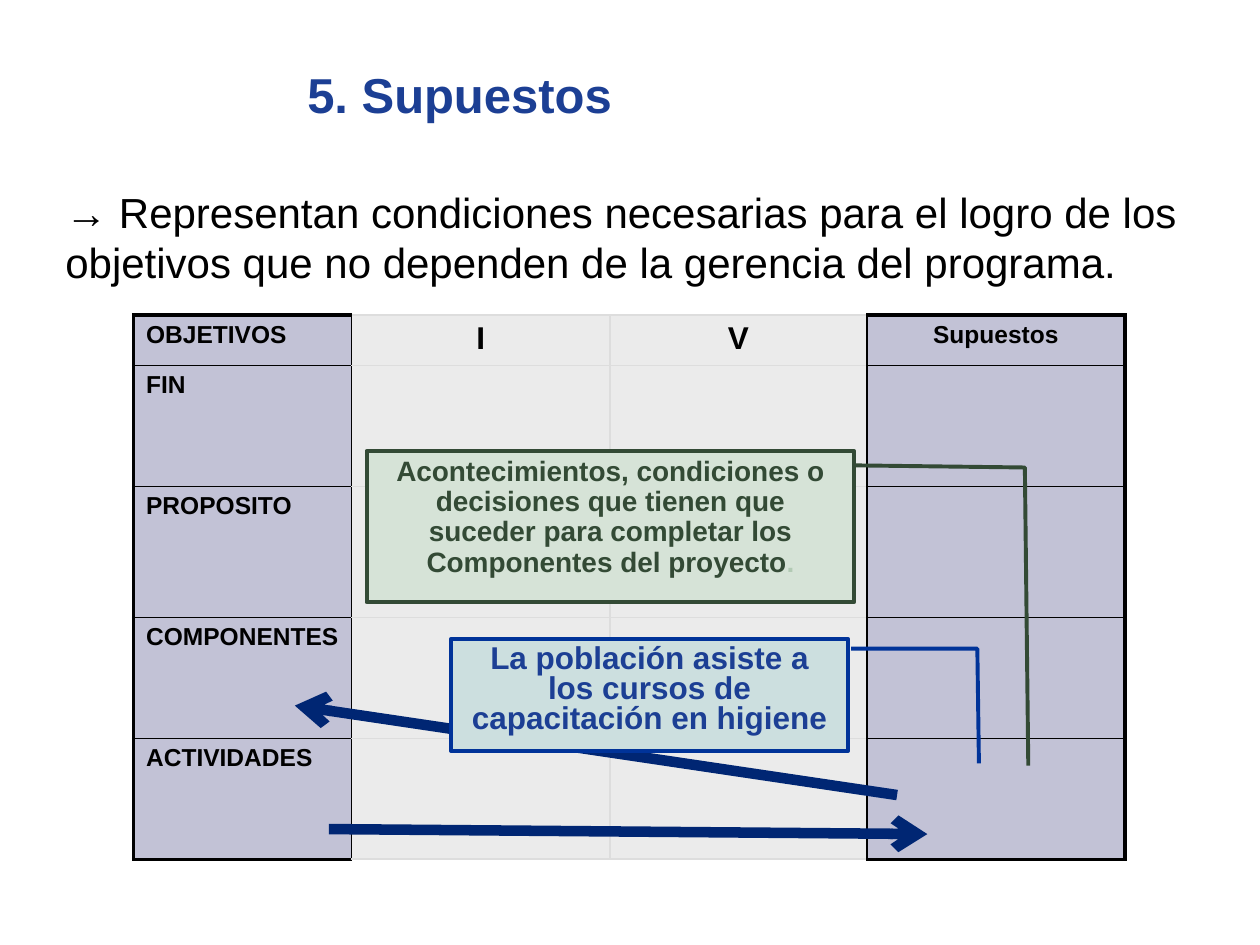
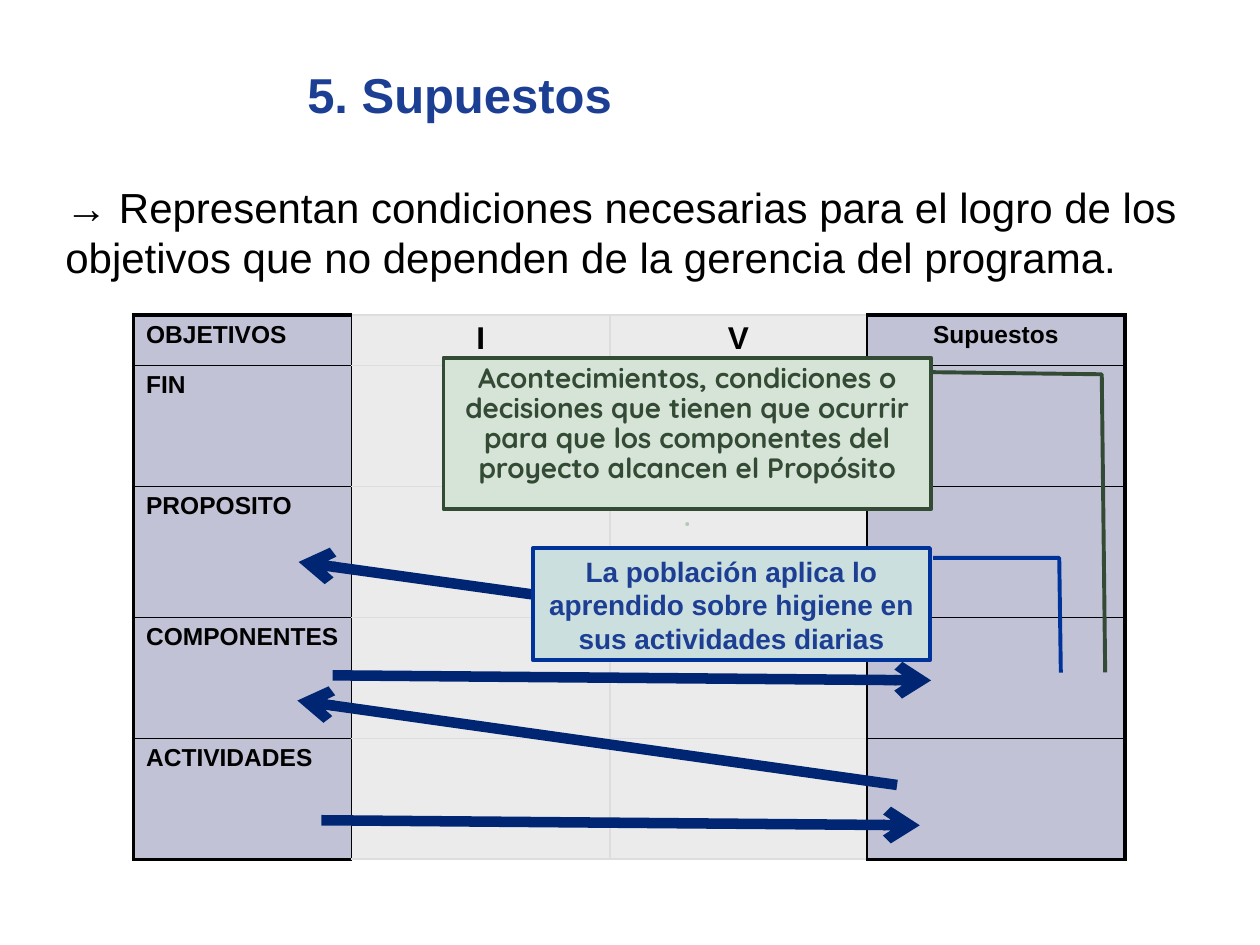
from lxml import etree
from pptx import Presentation
from pptx.dml.color import RGBColor
from pptx.enum.shapes import MSO_CONNECTOR, MSO_SHAPE
from pptx.enum.text import MSO_ANCHOR, PP_ALIGN
from pptx.oxml.ns import qn
from pptx.util import Inches, Pt

BLACK = RGBColor(0x00, 0x00, 0x00)
WHITE = RGBColor(0xFF, 0xFF, 0xFF)
TITLE_BLUE = RGBColor(0x1C, 0x3F, 0x94)
ARROW_BLUE = RGBColor(0x00, 0x26, 0x73)
EXAMPLE_LINE = RGBColor(0x00, 0x33, 0x99)
EXAMPLE_FILL = RGBColor(0xCC, 0xDF, 0xDF)
MEANING_GREEN = RGBColor(0x33, 0x4A, 0x35)
MEANING_FILL = RGBColor(0xD6, 0xE3, 0xD7)
PALE_GREEN = RGBColor(0xB2, 0xCA, 0xB4)
LAVENDER = RGBColor(0xC2, 0xC2, 0xD6)
GREY = RGBColor(0xD9, 0xD9, 0xD9)
GRID_GREY = RGBColor(0xDD, 0xDD, 0xDD)

HEADERS = ["OBJETIVOS", "I", "V", "Supuestos"]
LEVELS = ["FIN", "PROPOSITO", "COMPONENTES", "ACTIVIDADES"]
COLUMN_WIDTHS = [1.73, 2.05, 2.04, 2.05]
ROW_HEIGHTS = [0.4, 0.96, 1.04, 0.96, 0.96]
MEANING_LEADER = [0.095, 0.999, 0.109, 1.35, 2.081, 1.357]
EXAMPLE_LEADER = [0.088, 1.008, 0.088, 1.326, 1.111, 1.33]
STATEMENT = ("→ Representan condiciones necesarias para el logro de los objetivos "
             "que no dependen de la gerencia del programa.")


def write(frame, *paragraphs, size, color=BLACK, bold=False, font="Arial",
          align=PP_ALIGN.LEFT, spacing=None, gap=0):
    """Fill a text frame; each paragraph is a list of (text, colour or None) runs."""
    frame.word_wrap = True
    for index, runs in enumerate(paragraphs):
        paragraph = frame.paragraphs[0] if index == 0 else frame.add_paragraph()
        paragraph.alignment = align
        if spacing:
            paragraph.line_spacing = spacing
        if gap:
            paragraph.space_after = Pt(gap)
            if index:
                paragraph.space_before = Pt(gap)
        for text, run_color in runs:
            run = paragraph.add_run()
            run.text = text
            run.font.name, run.font.size, run.font.bold = font, Pt(size), bold
            run.font.color.rgb = run_color or color


def add_text(slide, box, text, **style):
    """Place a text box of one paragraph."""
    frame = slide.shapes.add_textbox(*map(Inches, box)).text_frame
    write(frame, [(text, None)], **style)


def set_border(cell, side, color, width):
    """Draw one side of a table cell."""
    line = etree.SubElement(cell._tc.get_or_add_tcPr(), qn(f"a:ln{side}"),
                            w=str(Pt(width)))
    fill = etree.SubElement(line, qn("a:solidFill"))
    etree.SubElement(fill, qn("a:srgbClr"), val=str(color))


def format_cell(cell, row, column):
    """Give a cell its borders and fill according to its place in the matrix."""
    last_row, last_column = len(ROW_HEIGHTS) - 1, len(COLUMN_WIDTHS) - 1
    key = column in (0, last_column)
    sides = {
        "L": (key or column == 1, column == 0),
        "R": (key or column == last_column - 1, column == last_column),
        "T": (key, key and row == 0),
        "B": (key, key and row == last_row),
    }
    for side, (dark, outer) in sides.items():
        set_border(cell, side, BLACK if dark else GRID_GREY, 2.25 if outer else 1)
    cell.fill.solid()
    cell.fill.fore_color.rgb = LAVENDER if key else GREY
    if not key:
        tint = cell._tc.tcPr.find(qn("a:solidFill")).find(qn("a:srgbClr"))
        etree.SubElement(tint, qn("a:alpha"), val="50000")


def add_matrix(slide, left, top):
    """Draw the logical framework matrix."""
    matrix = slide.shapes.add_table(
        len(ROW_HEIGHTS), len(COLUMN_WIDTHS), Inches(left), Inches(top),
        Inches(sum(COLUMN_WIDTHS)), Inches(sum(ROW_HEIGHTS))).table
    matrix.first_row = matrix.horz_banding = False
    for column, width in zip(matrix.columns, COLUMN_WIDTHS):
        column.width = Inches(width)
    for row, height in zip(matrix.rows, ROW_HEIGHTS):
        row.height = Inches(height)
    for row in range(len(ROW_HEIGHTS)):
        for column in range(len(COLUMN_WIDTHS)):
            format_cell(matrix.cell(row, column), row, column)
    for column, header in enumerate(HEADERS):
        write(matrix.cell(0, column).text_frame, [(header, None)], bold=True,
              size=18 if column in (1, 2) else 14,
              align=PP_ALIGN.CENTER if column else PP_ALIGN.LEFT)
    for row, level in enumerate(LEVELS, start=1):
        write(matrix.cell(row, 0).text_frame, [(level, None)], size=14, bold=True)


def add_callout(slide, box, leader, fill, line, *paragraphs, **style):
    """Draw a bordered callout with its bent leader line."""
    callout = slide.shapes.add_shape(MSO_SHAPE.LINE_CALLOUT_2, *map(Inches, box))
    callout.shadow.inherit = False
    for index, value in enumerate(leader):
        callout.adjustments[index] = value
    callout.fill.solid()
    callout.fill.fore_color.rgb = fill
    callout.line.color.rgb = line
    callout.line.width = Pt(2.25)
    callout.text_frame.vertical_anchor = MSO_ANCHOR.TOP
    write(callout.text_frame, *paragraphs, bold=True, align=PP_ALIGN.CENTER, **style)


def add_meaning(slide, left, top, *paragraphs, **style):
    """Place the green callout that explains the assumption."""
    add_callout(slide, (left, top, 3.87, 1.2), MEANING_LEADER, MEANING_FILL,
                MEANING_GREEN, *paragraphs, size=16, color=MEANING_GREEN,
                spacing=0.9, gap=5, **style)


def add_example(slide, left, top, text, **style):
    """Place the blue callout that gives an example."""
    add_callout(slide, (left, top, 3.15, 0.89), EXAMPLE_LEADER, EXAMPLE_FILL,
                EXAMPLE_LINE, [(text, None)], color=TITLE_BLUE, **style)


def add_arrow(slide, *ends):
    """Draw a thick arrow from the first point to the second."""
    arrow = slide.shapes.add_connector(MSO_CONNECTOR.STRAIGHT, *map(Inches, ends))
    arrow.line.color.rgb = ARROW_BLUE
    arrow.line.width = Pt(6)
    etree.SubElement(arrow.line._get_or_add_ln(), qn("a:tailEnd"), type="arrow")
    etree.SubElement(arrow._element.spPr, qn("a:effectLst"))


def start_slide(deck, statement_top):
    """Add a slide with the shared title, statement and matrix."""
    slide = deck.slides.add_slide(deck.slide_layouts[6])
    slide.background.fill.solid()
    slide.background.fill.fore_color.rgb = WHITE
    add_matrix(slide, 1.06, 2.5)
    add_text(slide, (0.42, statement_top, 9.58, 0.91), STATEMENT, size=24)
    add_text(slide, (2.34, 0.46, 7.58, 0.57), "5. Supuestos", size=28,
             color=TITLE_BLUE, bold=True)
    return slide


def build_activities(deck):
    """Build the slide that leads from activities to components."""
    slide = start_slide(deck, 1.43)
    add_meaning(slide, 2.91, 3.58, [
        ("Acontecimientos, condiciones o decisiones que tienen que suceder "
         "para completar los Componentes del proyecto", None), (".", PALE_GREEN)])
    add_arrow(slide, 7.12, 6.31, 2.34, 5.6)
    add_arrow(slide, 2.61, 6.58, 7.36, 6.62)
    add_example(slide, 3.58, 5.07,
                "La población asiste a los cursos de capacitación en higiene",
                size=18, spacing=0.8, gap=5)


def build_components(deck):
    """Build the slide that leads from components to purpose."""
    slide = start_slide(deck, 1.39)
    add_meaning(slide, 3.52, 2.84, [
        ("Acontecimientos, condiciones o decisiones que tienen que ocurrir "
         "para que los componentes del proyecto alcancen el Propósito", None)],
        [(".", PALE_GREEN)], font="Quicksand")
    add_arrow(slide, 7.12, 6.23, 2.36, 5.56)
    add_arrow(slide, 2.55, 6.51, 7.3, 6.55)
    add_arrow(slide, 2.64, 5.36, 7.39, 5.4)
    add_arrow(slide, 7.12, 5.12, 2.37, 4.46)
    add_example(slide, 4.23, 4.35,
                "La población aplica lo aprendido sobre higiene en sus "
                "actividades diarias", size=16)


def main():
    """Build and save the deck."""
    deck = Presentation()
    deck.slide_width, deck.slide_height = Inches(10), Inches(7.5)
    build_activities(deck)
    build_components(deck)
    deck.save("out.pptx")


if __name__ == "__main__":
    main()
